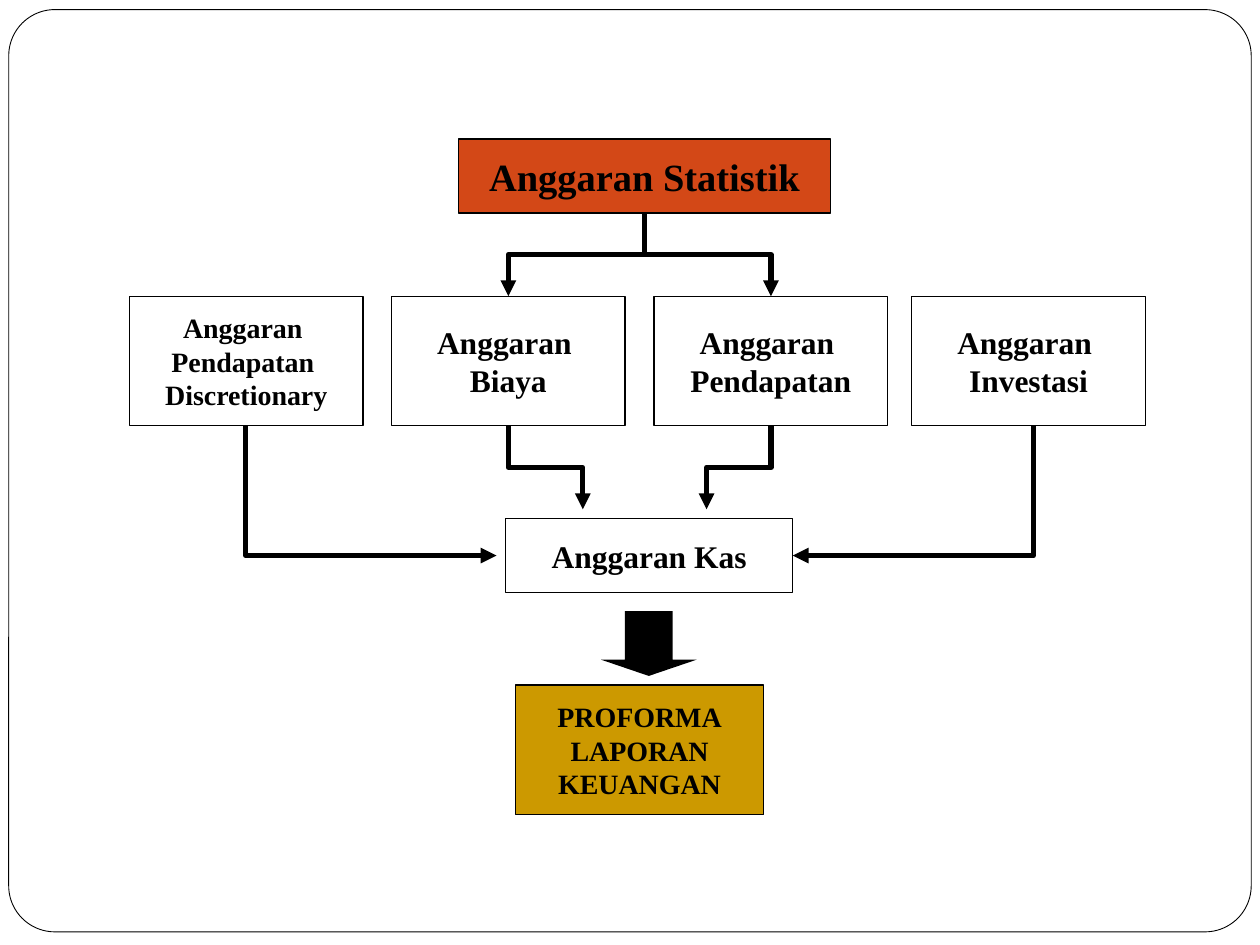
"""Build a slide that shows how the budgets lead to the pro forma financial report."""
from dataclasses import dataclass
from typing import Optional

from lxml import etree
from pptx import Presentation
from pptx import util as u
from pptx.dml.color import RGBColor
from pptx.enum import shapes, text
from pptx.oxml import ns

COLOURS = {"ink": "000000", "paper": "FFFFFF", "orange": "D34817", "gold": "CC9900"}
FONT = "Times New Roman"
ROW_TOP, ROW_WIDTH, ROW_HEIGHT = 169.25, 133.5, 74
ROW_BOTTOM = ROW_TOP + ROW_HEIGHT


@dataclass
class Box:
    words: str
    left: float
    top: float
    width: float
    height: float
    size: float
    fill: Optional[str] = None


@dataclass
class Elbow:
    start: tuple[float, float]
    end: tuple[float, float]
    preset: str = "bentConnector3"


def colour(name: str) -> RGBColor:
    return RGBColor.from_string(COLOURS[name])


def add_block(page, kind, left: float, top: float, width: float, height: float, *,
              fill: Optional[str] = None, line: Optional[float] = None):
    shape = page.shapes.add_shape(kind, u.Pt(left), u.Pt(top), u.Pt(width), u.Pt(height))
    shape.shadow.inherit = False
    if fill:
        shape.fill.solid()
        shape.fill.fore_color.rgb = colour(fill)
    else:
        shape.fill.background()
    if line:
        shape.line.color.rgb = colour("ink")
        shape.line.width = u.Pt(line)
    else:
        shape.line.fill.background()
    return shape


def write(shape, words: str, *, size: float, bold: bool = True, name: str = "ink") -> None:
    frame = shape.text_frame
    frame.word_wrap = False
    frame.vertical_anchor = text.MSO_ANCHOR.MIDDLE
    frame.margin_left = frame.margin_right = u.Pt(6.5)
    frame.margin_top = frame.margin_bottom = u.Pt(3)
    for index, line in enumerate(words.split("\n")):
        para = frame.paragraphs[0] if index == 0 else frame.add_paragraph()
        para.alignment = text.PP_ALIGN.CENTER
        span = para.add_run()
        span.text = line
        span.font.name = FONT
        span.font.size = u.Pt(size)
        span.font.bold = bold
        span.font.color.rgb = colour(name)


def add_box(page, box: Box) -> None:
    shape = add_block(page, shapes.MSO_SHAPE.RECTANGLE, box.left, box.top,
                      box.width, box.height, fill=box.fill, line=0.75)
    write(shape, box.words, size=box.size)


def add_elbow(page, elbow: Elbow) -> None:
    (x1, y1), (x2, y2) = elbow.start, elbow.end
    across, down = abs(x2 - x1), y2 - y1
    left, top = (x1 + x2 - down) / 2, (y1 + y2 - across) / 2
    connector = page.shapes.add_connector(
        shapes.MSO_CONNECTOR.ELBOW, u.Pt(left), u.Pt(top),
        u.Pt(left + down), u.Pt(top + across))
    connector.line.color.rgb = colour("ink")
    connector.line.width = u.Pt(3)
    properties = connector._element.spPr
    frame = properties.find(ns.qn("a:xfrm"))
    if x2 < x1:
        frame.set("rot", str(90 * 60000))
    else:
        frame.set("rot", str(270 * 60000))
        frame.set("flipH", "1")
    properties.find(ns.qn("a:prstGeom")).set("prst", elbow.preset)
    etree.SubElement(connector.line._get_or_add_ln(), ns.qn("a:tailEnd"), type="triangle")
    etree.SubElement(properties, ns.qn("a:effectLst"))


def budget(words: str, left: float, size: float = 18) -> Box:
    return Box(words, left, ROW_TOP, ROW_WIDTH, ROW_HEIGHT, size)


BOXES = [
    Box("Anggaran Statistik", 262, 79.5, 212.5, 42.25, 22, "orange"),
    budget("Anggaran \nPendapatan \nDiscretionary", 74, 16),
    budget("Anggaran \nBiaya", 223.75),
    budget("Anggaran \nPendapatan", 373.75),
    budget("Anggaran \nInvestasi", 521),
    Box("Anggaran Kas", 289, 296.25, 164, 42.5, 18),
    Box("PROFORMA\nLAPORAN\nKEUANGAN", 294.5, 391.5, 142, 74, 16, "gold"),
]

ELBOWS = [
    Elbow((368.25, 121.75), (290.5, ROW_TOP)),
    Elbow((368.25, 121.75), (440.5, ROW_TOP)),
    Elbow((290.5, ROW_BOTTOM), (333, 291)),
    Elbow((440.5, ROW_BOTTOM), (403.75, 291)),
    Elbow((140.5, ROW_BOTTOM), (283.75, 317.5), "bentConnector2"),
    Elbow((590.5, ROW_BOTTOM), (453, 317.5), "bentConnector2"),
]


def main() -> None:
    deck = Presentation()
    deck.slide_width, deck.slide_height = u.Pt(720), u.Pt(540)
    page = deck.slides.add_slide(deck.slide_layouts[6])
    border = add_block(page, shapes.MSO_SHAPE.ROUNDED_RECTANGLE, 5, 5.5, 710, 527,
                       fill="paper", line=0.5)
    border.adjustments[0] = 0.05
    for box in BOXES:
        add_box(page, box)
    for elbow in ELBOWS:
        add_elbow(page, elbow)
    arrow = add_block(page, shapes.MSO_SHAPE.DOWN_ARROW, 343.5, 349.25, 54.5, 37, fill="ink")
    arrow.adjustments[1] = 0.25
    deck.save("out.pptx")


if __name__ == "__main__":
    main()
